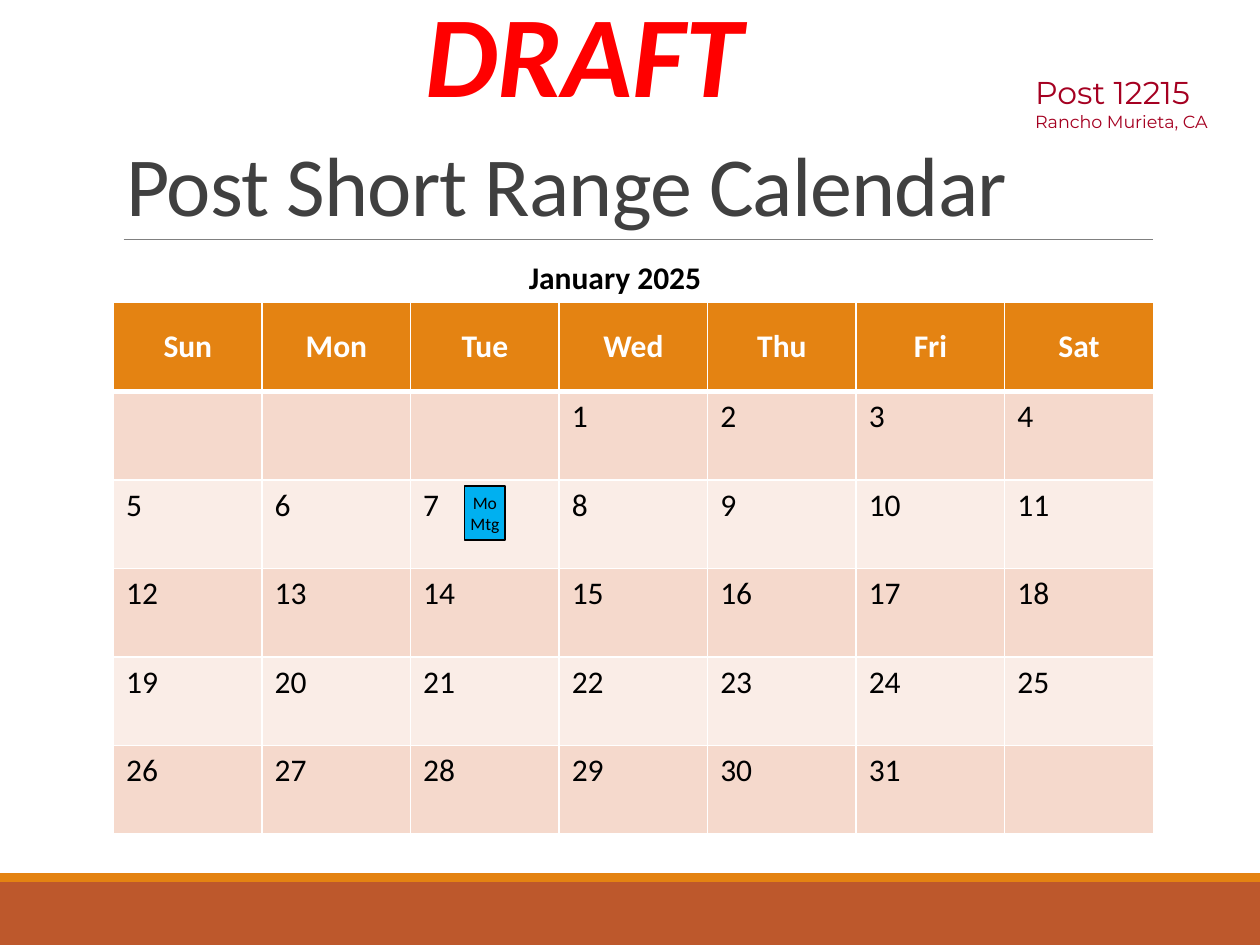
"""Build a one-month post calendar slide with a draft mark and a meeting tag."""
import pptx
import pptx.dml.color
import pptx.enum.shapes
import pptx.enum.text
import pptx.oxml
import pptx.oxml.ns
import pptx.util

Cm = pptx.util.Cm
Pt = pptx.util.Pt
RGBColor = pptx.dml.color.RGBColor
ALIGN = pptx.enum.text.PP_ALIGN
ANCHOR = pptx.enum.text.MSO_ANCHOR

WHITE = RGBColor(0xFF, 0xFF, 0xFF)
BLACK = RGBColor(0, 0, 0)
RED = RGBColor(0xFF, 0, 0)
CRIMSON = RGBColor(0xA5, 0, 0x21)
CHARCOAL = RGBColor(0x40, 0x40, 0x40)
GRAY = RGBColor(0x80, 0x80, 0x80)
ORANGE = RGBColor(0xE4, 0x83, 0x12)
RUST = RGBColor(0xBD, 0x58, 0x2C)
BANDS = (RGBColor(0xF5, 0xD9, 0xCC), RGBColor(0xFA, 0xED, 0xE7))
SKY = RGBColor(0, 0xB0, 0xF0)

TITLE = "Post Short Range Calendar"
MONTH = "January 2025"
WEEKDAYS = ["Sun", "Mon", "Tue", "Wed", "Thu", "Fri", "Sat"]
FIRST_WEEKDAY, DAY_COUNT, WEEK_COUNT = 3, 31, 5
POST_LINES = ["Post 12215", "Rancho Murieta, CA"]
MEETING_LINES = ["Mo", "Mtg"]

TABLE_LEFT, TABLE_TOP, TABLE_WIDTH, TABLE_HEIGHT = 2.29, 6.1, 20.96, 10.72
FOOTER_BARS = [(17.78, 1.27, RUST), (17.6, 0.18, ORANGE)]


def write(frame, text, sizes=(18,), font="Calibri", color=BLACK, bold=False,
          italic=False, align=ALIGN.LEFT, wrap=False, spacing=None, tracking=None):
    frame.word_wrap = wrap
    lines = text.split("\n")
    for index, line in enumerate(lines):
        paragraph = frame.paragraphs[0] if index == 0 else frame.add_paragraph()
        paragraph.alignment = align
        if spacing:
            paragraph.line_spacing = spacing
        run = paragraph.add_run()
        run.text = line
        run.font.name = font
        run.font.size = Pt(sizes[index % len(sizes)])
        run.font.bold = bold
        run.font.italic = italic
        run.font.color.rgb = color
        if tracking is not None:
            run._r.get_or_add_rPr().set("spc", str(int(tracking * 100)))


def add_label(slide, place, text, **text_format):
    label = slide.shapes.add_textbox(*map(Cm, place))
    write(label.text_frame, text, **text_format)


def add_box(slide, place, fill, line=None):
    box = slide.shapes.add_shape(
        pptx.enum.shapes.MSO_SHAPE.RECTANGLE, *map(Cm, place))
    box.shadow.inherit = False
    box.fill.solid()
    box.fill.fore_color.rgb = fill
    if line is None:
        box.line.fill.background()
    else:
        box.line.color.rgb = line
        box.line.width = Pt(0.75)
    return box


def set_borders(cell, **widths):
    properties = cell._tc.get_or_add_tcPr()
    for position, side in enumerate(("L", "R", "T", "B")):
        border = pptx.oxml.parse_xml(
            f'<a:ln{side} {pptx.oxml.ns.nsdecls("a")} w="{Pt(widths.get(side, 1))}">'
            f'<a:solidFill><a:srgbClr val="{WHITE}"/></a:solidFill></a:ln{side}>')
        properties.insert(position, border)


def add_calendar(slide):
    calendar = slide.shapes.add_table(
        WEEK_COUNT + 1, len(WEEKDAYS), Cm(TABLE_LEFT), Cm(TABLE_TOP),
        Cm(TABLE_WIDTH), Cm(TABLE_HEIGHT)).table
    for column in calendar.columns:
        column.width = Cm(TABLE_WIDTH / len(WEEKDAYS))
    for row in calendar.rows:
        row.height = Cm(TABLE_HEIGHT / (WEEK_COUNT + 1))
    for column, weekday in enumerate(WEEKDAYS):
        heading = calendar.cell(0, column)
        heading.vertical_anchor = ANCHOR.MIDDLE
        heading.fill.solid()
        heading.fill.fore_color.rgb = ORANGE
        set_borders(heading, B=3)
        write(heading.text_frame, weekday, color=WHITE, bold=True,
              align=ALIGN.CENTER, wrap=True)
        for week in range(WEEK_COUNT):
            date_cell = calendar.cell(week + 1, column)
            date_cell.fill.solid()
            date_cell.fill.fore_color.rgb = BANDS[week % 2]
            set_borders(date_cell, T=3 if week == 0 else 1)
            day = week * len(WEEKDAYS) + column - FIRST_WEEKDAY + 1
            if 1 <= day <= DAY_COUNT:
                write(date_cell.text_frame, str(day), wrap=True)


def main():
    deck = pptx.Presentation()
    deck.slide_width, deck.slide_height = Cm(25.4), Cm(19.05)
    slide = deck.slides.add_slide(deck.slide_layouts[5])

    for top, height, color in FOOTER_BARS:
        add_box(slide, (0, top, 25.4, height), color)

    title_rule = slide.shapes.add_connector(
        pptx.enum.shapes.MSO_CONNECTOR.STRAIGHT,
        Cm(2.49), Cm(4.83), Cm(23.24), Cm(4.83))
    title_rule.line.color.rgb = GRAY
    title_rule.line.width = Pt(0.5)
    title_rule._element.spPr.append(pptx.oxml.parse_xml(
        f'<a:effectLst {pptx.oxml.ns.nsdecls("a")}/>'))

    add_label(slide, (20.62, 1.35, 4.42, 1.45), "\n".join(POST_LINES),
              sizes=(18, 10), font="Montserrat", color=CRIMSON)
    add_label(slide, (8.28, -0.48, 6.99, 3.07), "DRAFT", sizes=(66,), color=RED,
              bold=True, italic=True, align=ALIGN.CENTER)

    title = slide.shapes.title
    title.left, title.top, title.width, title.height = map(
        Cm, (TABLE_LEFT, 0.79, TABLE_WIDTH, 4.04))
    title.text_frame.vertical_anchor = ANCHOR.BOTTOM
    write(title.text_frame, TITLE, sizes=(48,), color=CHARCOAL, wrap=True,
          spacing=0.85, tracking=-0.5)

    add_calendar(slide)
    add_label(slide, (10.41, 5.08, 4.01, 1.02), MONTH, bold=True)
    meeting = add_box(slide, (9.37, 9.8, 0.81, 1.09), SKY, line=BLACK)
    meeting.text_frame.vertical_anchor = ANCHOR.MIDDLE
    write(meeting.text_frame, "\n".join(MEETING_LINES), sizes=(10,),
          align=ALIGN.CENTER)

    deck.save("out.pptx")


if __name__ == "__main__":
    main()
